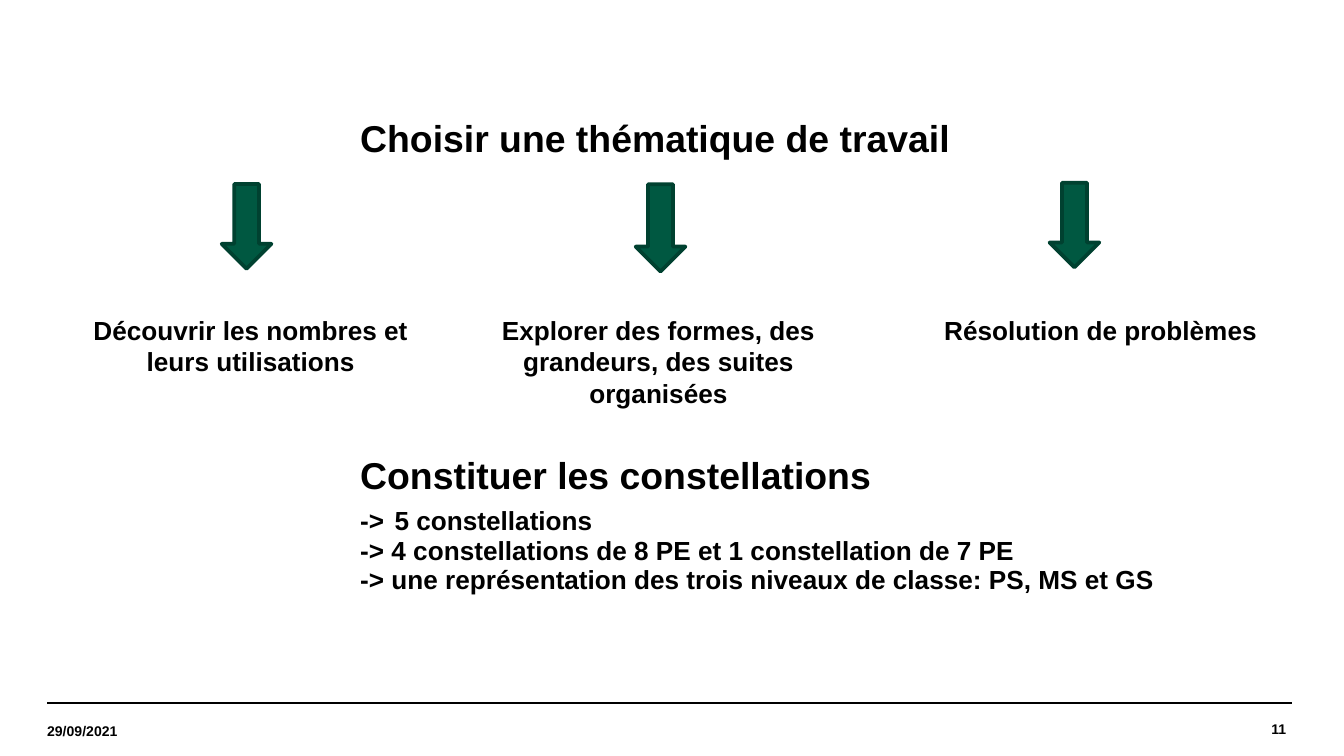
from dataclasses import dataclass

from pptx import Presentation
from pptx.dml.color import RGBColor as Rgb
from pptx.enum.shapes import MSO_CONNECTOR as Link, MSO_SHAPE as Shape
from pptx.enum.text import MSO_ANCHOR as Anchor, PP_ALIGN as Align
from pptx.oxml.ns import qn
from pptx.util import Inches, Pt


@dataclass(frozen=True)
class Theme:
    face: str = "Arial"
    ink: Rgb = Rgb(0, 0, 0)
    green: Rgb = Rgb(0x00, 0x58, 0x41)
    edge: Rgb = Rgb(0x00, 0x41, 0x30)
    head: float = 20
    body: float = 14
    foot: float = 7.5


class Page:
    def __init__(self, slide, theme):
        self.slide, self.theme = slide, theme

    def text(self, spot, paras, anchor=Anchor.TOP, inset=(0, 0), **form):
        """Add a text box; each paragraph is a list of (text, size) runs."""
        frame = self.slide.shapes.add_textbox(*map(Inches, spot)).text_frame
        side, edge = map(Inches, inset)
        look = {"word_wrap": True, "vertical_anchor": anchor,
                "margin_left": side, "margin_right": side,
                "margin_top": edge, "margin_bottom": edge}
        for key, value in look.items():
            setattr(frame, key, value)
        for i, runs in enumerate(paras):
            para = frame.add_paragraph() if i else frame.paragraphs[0]
            for key, value in form.items():
                setattr(para, key, value)
            for words, size in runs:
                run = para.add_run()
                run.text = words
                style = {"name": self.theme.face, "size": Pt(size), "bold": True}
                for key, value in style.items():
                    setattr(run.font, key, value)
                run.font.color.rgb = self.theme.ink

    def block(self, spot, paras):
        """Add left-aligned, tightly spaced text centred in its height."""
        self.text(spot, paras, Anchor.MIDDLE, (0.12, 0.05), line_spacing=0.9)

    def arrow(self, *spot):
        shape = self.slide.shapes.add_shape(Shape.DOWN_ARROW, *map(Inches, spot))
        shape.shadow.inherit = False
        shape.fill.solid()
        shape.fill.fore_color.rgb = self.theme.green
        shape.line.color.rgb = self.theme.edge
        shape.line.width = Pt(2)
        line = shape.line._get_or_add_ln()
        line.append(line.makeelement(qn("a:round"), {}))

    def rule(self, left, right, top):
        line = self.slide.shapes.add_connector(
            Link.STRAIGHT, *map(Inches, (left, top, right, top)))
        line.line.color.rgb = self.theme.ink
        line.line.width = Pt(0.8)
        props = line._element.spPr
        props.append(props.makeelement(qn("a:effectLst"), {}))


def main():
    deck = Presentation()
    deck.slide_width = Inches(10)
    deck.slide_height = deck.slide_width * 9 // 16
    theme = Theme()
    page = Page(deck.slides.add_slide(deck.slide_layouts[6]), theme)

    for left in (0.35, 0.39):
        page.rule(left, left + 9.22, 5.23)
    page.text((8.09, 5.23, 1.48, 0.39), [[("11", theme.foot)]],
              Anchor.MIDDLE, alignment=Align.RIGHT)
    page.text((0.35, 5.25, 1.32, 0.38), [[("29/09/2021", theme.foot)]],
              Anchor.MIDDLE)

    page.block((2.56, 0.75, 7.01, 0.59),
               [[("Choisir une thématique de travail", theme.head)]])

    topics = [
        (0.67, 2.39, 2.13, "Découvrir les nombres et leurs utilisations"),
        (3.62, 2.56, 2.2, "Explorer des formes, des grandeurs, "
                          "des suites organisées"),
        (6.81, 2.76, 2.28, "Résolution de problèmes"),
    ]
    for left, width, height, words in topics:
        page.text((left, 2.34, width, height), [[(words, theme.body)]],
                  alignment=Align.CENTER)
    for i, (top, height) in enumerate([(1.37, 0.63), (1.37, 0.65), (1.36, 0.63)]):
        page.arrow(1.65 + 3.08 * i, top, 0.37, height)

    page.block((2.56, 3.15, 7.01, 1.53), [
        [("Constituer les constellations", theme.head)],
        [("->", theme.body), (" ", theme.head), ("5 constellations", theme.body)],
        [("-> 4 constellations de 8 PE et 1 constellation de 7 PE", theme.body)],
        [("-> une représentation des trois niveaux de classe: PS, MS et GS",
          theme.body)],
    ])
    deck.save("out.pptx")


if __name__ == "__main__":
    main()
